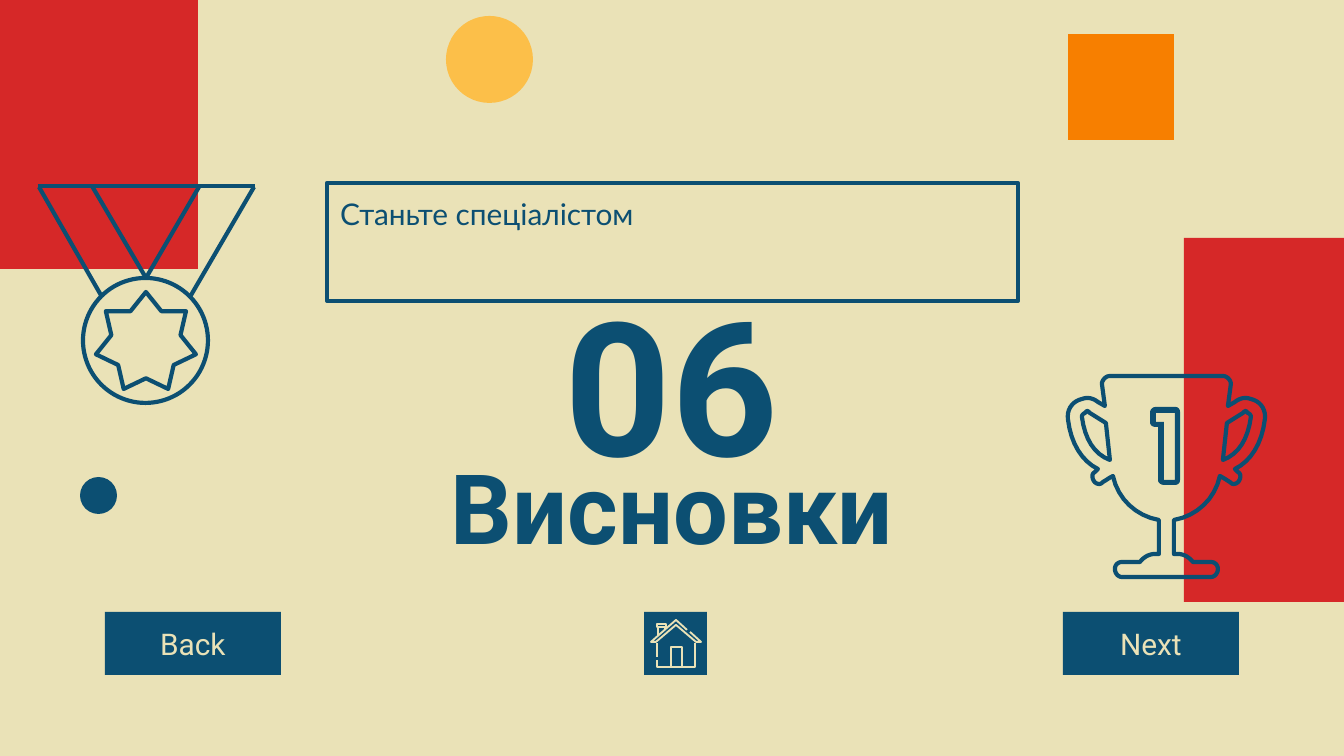
from pptx import Presentation
from pptx.dml.color import RGBColor
from pptx.enum.shapes import MSO_CONNECTOR, MSO_SHAPE
from pptx.enum.text import MSO_ANCHOR, MSO_AUTO_SIZE, PP_ALIGN
from pptx.oxml.xmlchemy import OxmlElement
from pptx.util import Emu, Pt

RECT, OVAL, STAR = MSO_SHAPE.RECTANGLE, MSO_SHAPE.OVAL, MSO_SHAPE.STAR_7_POINT
STRAIGHT = MSO_CONNECTOR.STRAIGHT
LEFT, CENTER = PP_ALIGN.LEFT, PP_ALIGN.CENTER
TOP, MIDDLE = MSO_ANCHOR.TOP, MSO_ANCHOR.MIDDLE
NO_FIT = MSO_AUTO_SIZE.NONE

CREAM = RGBColor(0xEA, 0xE2, 0xB7)
NAVY = RGBColor(0x0C, 0x4F, 0x72)
RED = RGBColor(0xD6, 0x28, 0x28)
ORANGE = RGBColor(0xF7, 0x7F, 0x00)
YELLOW = RGBColor(0xFC, 0xBF, 0x49)

# Content; boxes are left, top, width, height in px
TITLE = ("Висновки", (340, 450, 664, 112))
NUMBER = ("06", (387, 300, 570, 164))
SUBTITLE = ("Станьте спеціалістом", (327, 183, 691, 118))
DECORATIONS = [
    (RECT, (1184, 238, 160, 364), RED),
    (RECT, (0, -4, 198, 273), RED),
    (RECT, (1068, 34, 106, 106), ORANGE),
    (OVAL, (80, 477, 37, 37), NAVY),
    (OVAL, (446, 16, 87, 87), YELLOW),
]
BUTTONS = [("Back", 105), ("Next", 1063)]
BUTTON_TOP, BUTTON_WIDTH, BUTTON_HEIGHT = 612, 176, 63
HOME_LEFT = 644

# Medal: star, disc and ribbon edges
MEDAL = [(STAR, (96, 292, 100, 97)), (OVAL, (83, 278, 125, 125))]
RIBBON = [(102, 297, 39, 187), (146, 278, 92, 186), (146, 278, 199, 187),
          (190, 297, 254, 187), (38, 186, 255, 186)]

# Outlines: a pair is a corner, six numbers are a Bezier curve
TROPHY_AXIS_TWICE = 2333
TROPHY_HALF = [
    (1110, 376), (1106, 376, 1102, 380, 1102, 384), (1105, 406), (1098, 402),
    (1094, 399, 1091, 398, 1087, 398), (1085, 398, 1082, 399, 1079, 400),
    (1071, 403, 1067, 411, 1068, 419), (1071, 444, 1082, 461, 1098, 469),
    (1095, 472), (1090, 474, 1093, 484, 1099, 484),
    (1101, 484, 1102, 483, 1103, 482), (1105, 481, 1109, 478, 1113, 476),
    (1118, 499, 1136, 516, 1159, 520), (1159, 554), (1155, 554),
    (1149, 554, 1144, 557, 1140, 562), (1122, 562),
    (1118, 562, 1115, 565, 1115, 569), (1115, 573, 1118, 577, 1122, 577),
]
TROPHY_HANDLE = [
    (1087, 411), (1088, 411, 1089, 412, 1090, 413), (1106, 423), (1110, 460),
    (1094, 454, 1085, 439, 1082, 417), (1082, 415, 1083, 414, 1085, 413),
]
NUMERAL_INSIDE = [(1175, 413), (1175, 480), (1164, 480), (1164, 422),
                  (1156, 422), (1156, 413)]
NUMERAL_OUTSIDE = [
    (1156, 407), (1152, 407, 1150, 410, 1150, 413), (1150, 422),
    (1150, 425, 1152, 427, 1156, 427), (1158, 427), (1158, 480),
    (1158, 483, 1161, 485, 1164, 485), (1175, 485),
    (1178, 485, 1180, 483, 1180, 480), (1180, 412),
    (1180, 409, 1178, 407, 1175, 407),
]
HOUSE = [
    [(690, 632), (701, 642), (696, 642), (676, 625), (656, 642), (651, 642),
     (676, 620), (687, 630)],
    [(695, 643), (695, 667), (657, 667), (657, 660)],
    [(657, 657), (657, 643)],
    [(671, 667), (671, 647), (682, 647), (682, 667)],
    [(657, 624), (666, 624), (666, 627), (657, 627), (657, 624)],
    [(658, 627), (658, 635)],
    [(665, 627), (665, 630)],
]


def px(value):
    return Emu(round(value * 9144000 / 1344))


def paint(shape, fill=None, line=None, width=2.25):
    shape.shadow.inherit = False
    if fill is None:
        shape.fill.background()
    else:
        shape.fill.solid()
        shape.fill.fore_color.rgb = fill
    if line is None:
        shape.line.fill.background()
    else:
        shape.line.color.rgb = line
        shape.line.width = Pt(width)


def add_block(kind, box, **style):
    block = slide.shapes.add_shape(kind, *map(px, box))
    paint(block, **style)
    return block


def place(shape, box):
    shape.left, shape.top, shape.width, shape.height = map(px, box)


def write(shape, text, size, font="Roboto", color=NAVY, bold=False,
          align=CENTER, anchor=MIDDLE):
    frame = shape.text_frame
    frame.word_wrap = True
    frame.auto_size = NO_FIT
    frame.vertical_anchor = anchor
    frame.margin_left = frame.margin_right = px(13)
    frame.margin_top = frame.margin_bottom = px(13)
    paragraph = frame.paragraphs[0]
    paragraph.alignment = align
    paragraph.space_before = Pt(0)
    run = paragraph.add_run()
    run.text = text
    run.font.name, run.font.size, run.font.bold = font, Pt(size), bold
    run.font.color.rgb = color


def trace(outline, steps=8):
    """Turn corners and Bezier curves into a list of points."""
    points = []
    for piece in outline:
        if len(piece) == 2:
            points.append(piece)
            continue
        controls = [points[-1], piece[:2], piece[2:4], piece[4:]]
        for step in range(1, steps + 1):
            t = step / steps
            weights = ((1 - t) ** 3, 3 * t * (1 - t) ** 2,
                       3 * t * t * (1 - t), t ** 3)
            points.append(tuple(sum(w * c[axis] for w, c in zip(weights, controls))
                                for axis in (0, 1)))
    return points


def mirror(points):
    return [(TROPHY_AXIS_TWICE - x, y) for x, y in reversed(points)]


def add_outline(contours, close=True, **style):
    contours = [[(px(x), px(y)) for x, y in contour] for contour in contours]
    builder = slide.shapes.build_freeform(*contours[0][0])
    for index, contour in enumerate(contours):
        if index:
            builder.move_to(*contour[0])
        builder.add_line_segments(contour[1:], close=close)
    paint(builder.convert_to_shape(), **style)


prs = Presentation()
prs.slide_width, prs.slide_height = px(1344), px(756)
slide = prs.slides.add_slide(prs.slide_layouts[0])
slide.background.fill.solid()
slide.background.fill.fore_color.rgb = CREAM

# Headings
title, subtitle = slide.placeholders
place(title, TITLE[1])
write(title, TITLE[0], 52, bold=True)
place(subtitle, SUBTITLE[1])
subtitle.line.color.rgb = NAVY
subtitle.line.width = Pt(2.25)
write(subtitle, SUBTITLE[0], 16, font="Lato", align=LEFT, anchor=TOP)
number = slide.shapes.add_textbox(*map(px, NUMBER[1]))
write(number, NUMBER[0], 100, bold=True)

# Background blocks and dots
for kind, box, color in DECORATIONS:
    add_block(kind, box, fill=color)

# Trophy
half, handle = trace(TROPHY_HALF), trace(TROPHY_HANDLE)
add_outline([half + mirror(half), handle, mirror(handle)], line=NAVY)
add_outline([trace(NUMERAL_INSIDE), trace(NUMERAL_OUTSIDE)], fill=NAVY)

# Medal
for kind, box in MEDAL:
    add_block(kind, box, line=NAVY)
for ends in RIBBON:
    edge = slide.shapes.add_connector(STRAIGHT, *map(px, ends))
    edge.line.color.rgb = NAVY
    edge.line.width = Pt(2.25)
    edge._element.spPr.append(OxmlElement("a:effectLst"))

# Navigation
for label, left in BUTTONS:
    button = add_block(RECT, (left, BUTTON_TOP, BUTTON_WIDTH, BUTTON_HEIGHT), fill=NAVY)
    write(button, label, 16, color=CREAM)
add_block(RECT, (HOME_LEFT, BUTTON_TOP, BUTTON_HEIGHT, BUTTON_HEIGHT), fill=NAVY)
add_outline(HOUSE, close=False, line=CREAM, width=1)

prs.save("out.pptx")
